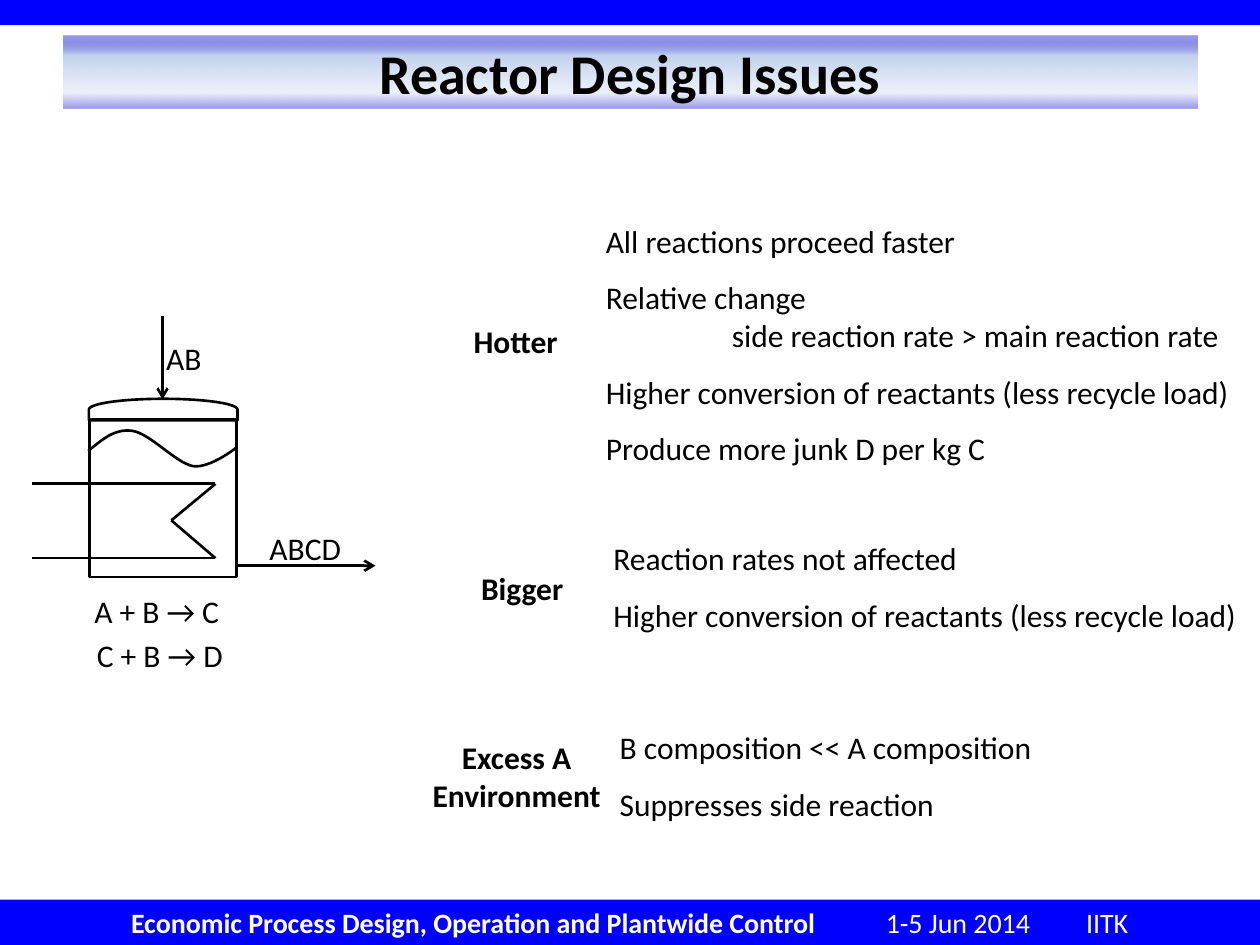
from dataclasses import dataclass

from lxml.etree import SubElement
from pptx import Presentation
from pptx.dml.color import RGBColor
from pptx.enum.shapes import MSO_CONNECTOR, MSO_SHAPE
from pptx.enum.text import MSO_ANCHOR, MSO_AUTO_SIZE, PP_ALIGN
from pptx.oxml import parse_xml
from pptx.oxml.ns import nsdecls, qn
from pptx.util import Inches, Pt

BLUE = RGBColor(0x00, 0x00, 0xFF)
BLACK = RGBColor(0x00, 0x00, 0x00)
WHITE = RGBColor(0xFF, 0xFF, 0xFF)
FONT = "Calibri"
LINE_WIDTH = Pt(1.5)
GAP = Pt(10.8)

# position %, colour, opacity %
TITLE_GRADIENT = [(1, "0000CC", 39), (27, "C2D1ED", 100),
                  (78, "D2DDF1", 40), (100, "0000CC", 40)]


@dataclass(frozen=True)
class Box:
    left: float
    top: float
    width: float
    height: float

    def emu(self) -> list:
        return [Inches(v) for v in (self.left, self.top, self.width, self.height)]


@dataclass(frozen=True)
class Label:
    box: Box
    lines: tuple
    bold: bool = False
    align: PP_ALIGN = PP_ALIGN.LEFT
    spaced: tuple = ()  # indices of lines with a gap above


@dataclass(frozen=True)
class Pipe:
    start: tuple
    end: tuple
    arrow: bool = False


LABELS = [
    Label(Box(1.22, 2.64, 0.48, 0.4), ("AB",)),
    Label(Box(0.65, 4.65, 1.2, 0.4), ("A + B → C",)),
    Label(Box(0.67, 5, 1.22, 0.4), ("C + B → D",)),
    Label(Box(2.04, 4.15, 0.78, 0.4), ("ABCD",)),
    Label(Box(3.66, 2.51, 0.88, 0.4), ("Hotter",), bold=True),
    Label(Box(4.71, 1.71, 5.2, 2.07),
          ("All reactions proceed faster",
           "Relative change",
           "\tside reaction rate > main reaction rate",
           "Higher conversion of reactants (less recycle load)",
           "Produce more junk D per kg C"), spaced=(1, 3, 4)),
    Label(Box(3.72, 4.47, 0.86, 0.4), ("Bigger",), bold=True),
    Label(Box(4.77, 4.23, 5.2, 0.86),
          ("Reaction rates not affected",
           "Higher conversion of reactants (less recycle load)"), spaced=(1,)),
    Label(Box(3.33, 5.81, 1.54, 0.71), ("Excess A", "Environment"),
          bold=True, align=PP_ALIGN.CENTER),
    Label(Box(4.82, 5.73, 3.51, 0.86),
          ("B composition << A composition", "Suppresses side reaction"), spaced=(1,)),
]

COIL_TIP = (1.36, 4.13)
PIPES = [
    Pipe((0.25, 3.84), (1.71, 3.84)),
    Pipe((0.25, 4.43), (1.71, 4.43)),
    Pipe(COIL_TIP, (1.71, 4.43)),
    Pipe(COIL_TIP, (1.71, 3.84)),
    Pipe((1.29, 2.51), (1.29, 3.17), arrow=True),
    Pipe((1.88, 4.49), (2.98, 4.49), arrow=True),
]

# Each Bézier segment starts where the previous one ended
LEVEL_START = (0.7, 3.58)
LEVEL_CURVES = [
    ((0.81, 3.49), (0.91, 3.4), (1.05, 3.42)),
    ((1.19, 3.44), (1.39, 3.67), (1.53, 3.7)),
    ((1.67, 3.72), (1.88, 3.55), (1.88, 3.55)),
]


def style_run(run, size: float, color: RGBColor = BLACK, bold: bool = False) -> None:
    run.font.name = FONT
    run.font.size = Pt(size)
    run.font.color.rgb = color
    run.font.bold = bold


def set_tabs(paragraph, *stops: float) -> None:
    tabs = SubElement(paragraph._p.get_or_add_pPr(), qn("a:tabLst"))
    for stop in stops:
        SubElement(tabs, qn("a:tab"), pos=str(Inches(stop)), algn="l")


def add_bar(slide, box: Box):
    bar = slide.shapes.add_shape(MSO_SHAPE.RECTANGLE, *box.emu())
    bar.shadow.inherit = False
    bar.fill.solid()
    bar.fill.fore_color.rgb = BLUE
    bar.line.fill.background()
    return bar


def add_footer(slide) -> None:
    frame = add_bar(slide, Box(0, 7.14, 10, 0.36)).text_frame
    frame.margin_left = Inches(1.04)
    frame.margin_top = frame.margin_bottom = 0
    frame.vertical_anchor = MSO_ANCHOR.MIDDLE
    line = frame.paragraphs[0]
    line.alignment = PP_ALIGN.LEFT
    set_tabs(line, 5.99, 7.58)
    for text, bold in (("Economic Process Design, Operation and Plantwide Control", True),
                       ("\t1-5 Jun 2014\tIITK", False)):
        run = line.add_run()
        run.text = text
        style_run(run, 16, WHITE, bold)


def format_title(slide) -> None:
    title = slide.shapes.title
    title.left, title.top, title.width, title.height = Box(0.5, 0.28, 9, 0.58).emu()
    stops = "".join(
        f'<a:gs pos="{pos * 1000}"><a:srgbClr val="{color}">'
        f'<a:alpha val="{opacity * 1000}"/></a:srgbClr></a:gs>'
        for pos, color, opacity in TITLE_GRADIENT)
    title._element.spPr.append(parse_xml(
        f'<a:gradFill {nsdecls("a")} rotWithShape="1"><a:gsLst>{stops}</a:gsLst>'
        '<a:lin ang="5400000" scaled="0"/></a:gradFill>'))
    frame = title.text_frame
    frame.text = "Reactor Design Issues"
    frame.vertical_anchor = MSO_ANCHOR.MIDDLE
    frame.auto_size = MSO_AUTO_SIZE.NONE
    frame.paragraphs[0].alignment = PP_ALIGN.CENTER
    style_run(frame.paragraphs[0].runs[0], 32, bold=True)


def outline(shape) -> None:
    shape.shadow.inherit = False
    shape.fill.background()
    shape.line.color.rgb = BLACK
    shape.line.width = LINE_WIDTH


def add_pipe(slide, pipe: Pipe) -> None:
    ends = [Inches(v) for v in pipe.start + pipe.end]
    connector = slide.shapes.add_connector(MSO_CONNECTOR.STRAIGHT, *ends)
    connector.line.color.rgb = BLACK
    connector.line.width = LINE_WIDTH
    properties = connector._element.spPr
    if pipe.arrow:
        SubElement(properties.find(qn("a:ln")), qn("a:tailEnd"), type="arrow")
    SubElement(properties, qn("a:effectLst"))


def bezier_points(start: tuple, curves: list, steps: int = 16) -> list:
    """Return points along the joined curves, in EMU, the start included."""
    points = [start]
    for c1, c2, end in curves:
        for i in range(1, steps + 1):
            t = i / steps
            u = 1 - t
            points.append(tuple(
                u**3 * a + 3 * u * u * t * b + 3 * u * t * t * c + t**3 * d
                for a, b, c, d in zip(start, c1, c2, end)))
        start = end
    return [(Inches(x), Inches(y)) for x, y in points]


def add_vessel(slide) -> None:
    outline(slide.shapes.add_shape(MSO_SHAPE.RECTANGLE, *Box(0.71, 3.33, 1.17, 1.25).emu()))
    lid = slide.shapes.add_shape(MSO_SHAPE.FLOWCHART_DELAY, *Box(1.21, 2.66, 0.17, 1.18).emu())
    lid.rotation = 270
    outline(lid)
    first, *rest = bezier_points(LEVEL_START, LEVEL_CURVES)
    level = slide.shapes.build_freeform(*first)
    level.add_line_segments(rest, close=False)
    outline(level.convert_to_shape())


def add_label(slide, label: Label) -> None:
    frame = slide.shapes.add_textbox(*label.box.emu()).text_frame
    frame.word_wrap = False
    frame.auto_size = MSO_AUTO_SIZE.SHAPE_TO_FIT_TEXT
    frame.text = "\n".join(label.lines)
    for index, paragraph in enumerate(frame.paragraphs):
        paragraph.alignment = label.align
        if index in label.spaced:
            paragraph.space_before = GAP
        if "\t" in label.lines[index]:
            set_tabs(paragraph, 1)
        for run in paragraph.runs:
            style_run(run, 18, bold=label.bold)


def main() -> None:
    deck = Presentation()
    deck.slide_width, deck.slide_height = Inches(10), Inches(7.5)
    slide = deck.slides.add_slide(deck.slide_layouts[5])
    add_bar(slide, Box(0, 0, 10, 0.2))
    add_footer(slide)
    format_title(slide)
    add_vessel(slide)
    for pipe in PIPES:
        add_pipe(slide, pipe)
    for label in LABELS:
        add_label(slide, label)
    deck.save("out.pptx")


if __name__ == "__main__":
    main()
